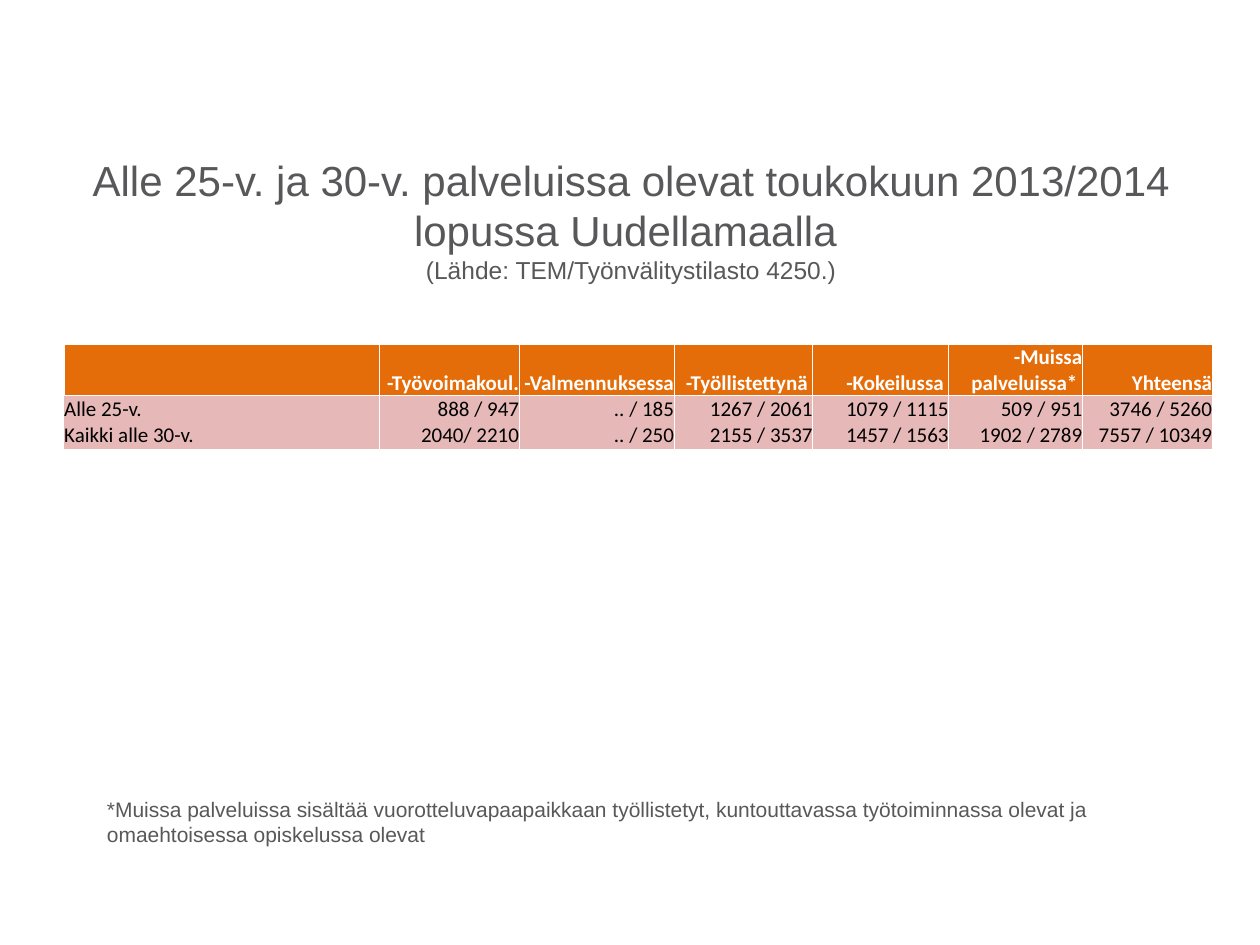
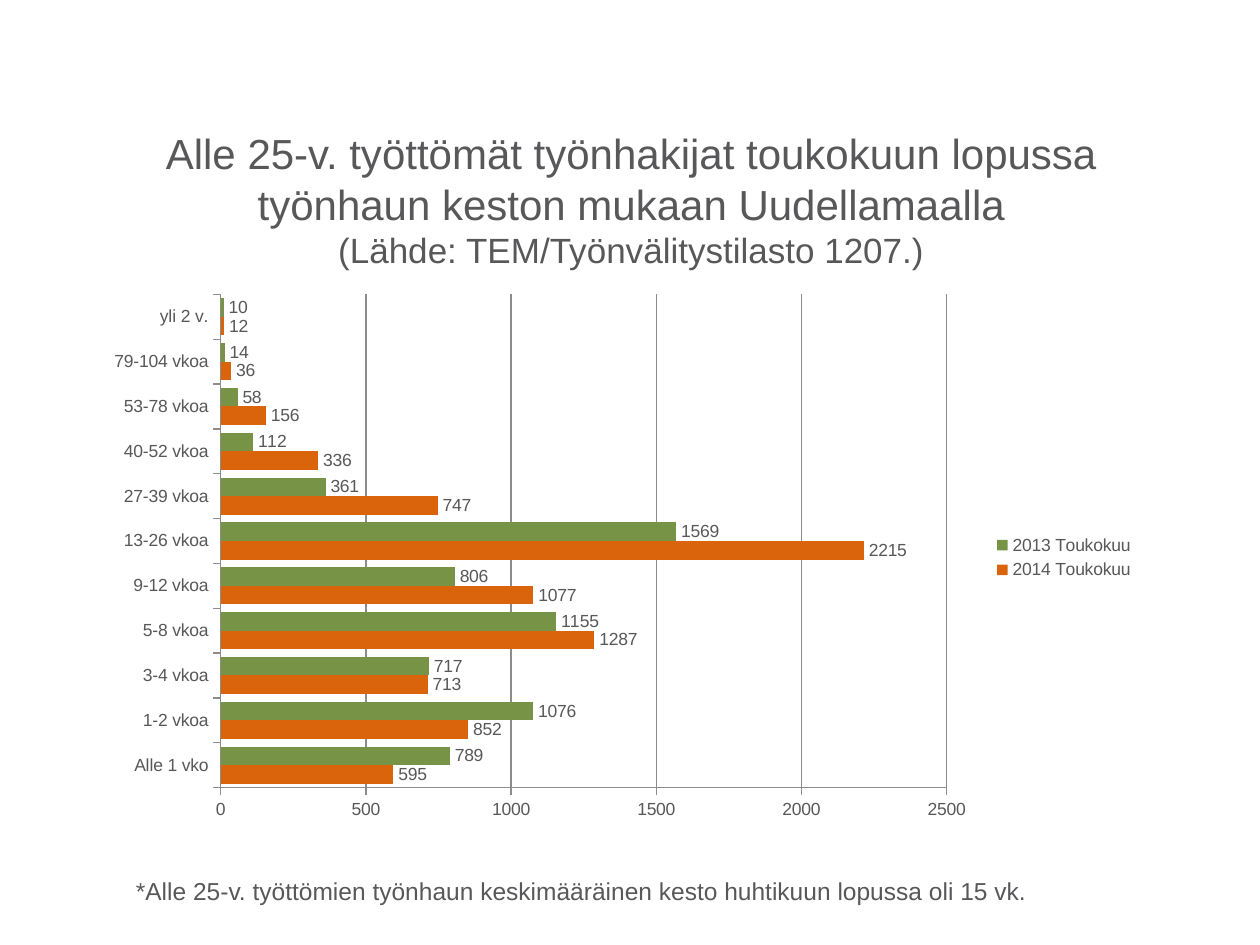
from lxml.etree import SubElement
from pptx import Presentation
from pptx.chart.data import CategoryChartData
from pptx.dml.color import RGBColor
from pptx.enum.chart import XL_CHART_TYPE as CT, XL_LABEL_POSITION as LP
from pptx.enum.chart import XL_LEGEND_POSITION as LEGEND, XL_TICK_MARK as TICK
from pptx.enum.text import MSO_ANCHOR as ANCHOR, MSO_AUTO_SIZE as FIT, PP_ALIGN as AL
from pptx.oxml.ns import qn
from pptx.util import Inches, Pt

WIDTH, HEIGHT = Inches(10), Inches(7.5)
GREY, WHITE, BLACK, AXIS = "58585A", "FFFFFF", "000000", "8C8C8C"
ORANGE, PINK = "E46D0A", "E6B9B8"
TITLE_LEFT, TITLE_WIDTH, TITLE_HEIGHT = 5.1, 90, 9.33

COLUMNS = [25, 11.1, 12.3, 11, 10.8, 10.6, 10.3]  # percent of the slide width
SERVICES = ["Työvoimakoul.", "Valmennuksessa", "Työllistettynä", "Kokeilussa",
            "Muissa palveluissa*"]
SERVICE_ROWS = [
    ["", *(f" -{name} " for name in SERVICES), "Yhteensä"],
    ["Alle 25-v.", "888 / 947", ".. / 185", "1267 / 2061", "1079 / 1115",
     "509 / 951", "3746 / 5260"],
    ["Kaikki alle 30-v.", "2040/ 2210", ".. / 250", "2155 / 3537", "1457 / 1563",
     "1902 / 2789", "7557 / 10349"],
]

DURATIONS = ["Alle 1 vko", "1-2 vkoa", "3-4 vkoa", "5-8 vkoa", "9-12 vkoa", "13-26 vkoa",
             "27-39 vkoa", "40-52 vkoa", "53-78 vkoa", "79-104 vkoa", "yli 2 v."]
SEEKERS = [
    ("2014 Toukokuu", "D9640C", [595, 852, 713, 1287, 1077, 2215, 747, 336, 156, 36, 12]),
    ("2013 Toukokuu", "779346", [789, 1076, 717, 1155, 806, 1569, 361, 112, 58, 14, 10]),
]


def rgb(value):
    return RGBColor.from_string(value)


def place(x, y, w, h):
    """Turn percentages of the slide into lengths."""
    return [round(share * side / 100)
            for share, side in zip((x, y, w, h), (WIDTH, HEIGHT, WIDTH, HEIGHT))]


def style(font, size, color=GREY, name="Arial", bold=False):
    font.size, font.name, font.bold = Pt(size), name, bold
    font.color.rgb = rgb(color)


def write(p, text, align=AL.LEFT, **font):
    p.alignment = align
    r = p.add_run()
    r.text = text
    style(r.font, **font)


def text_box(s, box, anchor=ANCHOR.TOP, fit=FIT.NONE):
    tf = s.shapes.add_textbox(*place(*box)).text_frame
    tf.word_wrap, tf.vertical_anchor, tf.auto_size = True, anchor, fit
    return tf.paragraphs[0]


def title(s, top, heading, source, source_size):
    p = text_box(s, (TITLE_LEFT, top, TITLE_WIDTH, TITLE_HEIGHT), ANCHOR.MIDDLE)
    write(p, heading, AL.CENTER, size=24)
    p.add_line_break()
    write(p, source, AL.CENTER, size=source_size)


def footnote(s, box, text, size):
    write(text_box(s, box, fit=FIT.SHAPE_TO_FIT_TEXT), text, size=size)


def borders(cell, widths):
    """Draw white borders; a width of 0 hides that side."""
    tcPr = cell._tc.get_or_add_tcPr()
    for side, width in zip("LRTB", widths):
        ln = SubElement(tcPr, qn(f"a:ln{side}"), w=str(Pt(width)))
        if width:
            fill = SubElement(ln, qn("a:solidFill"))
            SubElement(fill, qn("a:srgbClr"), val=WHITE)
        else:
            SubElement(ln, qn("a:noFill"))


def service_table(s, box, rows, heights):
    last = len(COLUMNS) - 1
    table = s.shapes.add_table(len(rows), len(COLUMNS), *place(*box)).table
    for column, share in zip(table.columns, COLUMNS):
        column.width = round(WIDTH * share / 100)
    for i, row in enumerate(rows):
        head = i == 0
        table.rows[i].height = round(HEIGHT * heights[i] / 100)
        for j, text in enumerate(row):
            cell = table.cell(i, j)
            cell.margin_left = cell.margin_right = cell.margin_top = cell.margin_bottom = 0
            cell.vertical_anchor = ANCHOR.BOTTOM
            edge = 0.5 if head else 0
            borders(cell, (
                1 if j == last else 0.5 if j else edge,
                1 if j == last - 1 else 0.5 if j < last else edge,
                0.5 if i < 2 else 0,
                edge,
            ))
            cell.fill.solid()
            cell.fill.fore_color.rgb = rgb(ORANGE if head else PINK)
            if text:
                write(cell.text_frame.paragraphs[0], text, AL.RIGHT if j else AL.LEFT,
                      size=12, name="Calibri", bold=head, color=WHITE if head else BLACK)


def thin_line(line):
    line.color.rgb, line.width = rgb(AXIS), Pt(0.75)


def fix_plot_area(chart, **shares):
    """Place the inner plot area by shares of the chart's size."""
    area = chart._chartSpace.chart.plotArea
    for old in area.findall(qn("c:layout")):
        area.remove(old)
    layout = SubElement(area, qn("c:layout"))
    area.insert(0, layout)
    manual = SubElement(layout, qn("c:manualLayout"))
    settings = dict(layoutTarget="inner", xMode="edge", yMode="edge", **shares)
    for tag, value in settings.items():
        SubElement(manual, qn(f"c:{tag}"), val=str(value))


def duration_chart(s, box):
    data = CategoryChartData()
    data.categories = DURATIONS
    for name, _, values in SEEKERS:
        data.add_series(name, values)
    chart = s.shapes.add_chart(CT.BAR_CLUSTERED, *place(*box), data).chart
    style(chart.font, 10)
    chart.has_title = False
    chart.has_legend = True
    chart.legend.position, chart.legend.include_in_layout = LEGEND.RIGHT, False

    # Bars and their values
    plot = chart.plots[0]
    plot.gap_width, plot.overlap, plot.vary_by_categories = 42, 0, False
    for series, (_, color, _) in zip(plot.series, SEEKERS):
        series.format.fill.solid()
        series.format.fill.fore_color.rgb = rgb(color)
        labels = series.data_labels
        labels.show_value, labels.position = True, LP.OUTSIDE_END
        style(labels.font, 10)

    # Axes
    for axis in (chart.category_axis, chart.value_axis):
        axis.major_tick_mark, axis.minor_tick_mark = TICK.OUTSIDE, TICK.NONE
        thin_line(axis.format.line)
    axis = chart.value_axis
    axis.minimum_scale, axis.maximum_scale, axis.major_unit = 0, 2500, 500
    axis.has_major_gridlines = True
    thin_line(axis.major_gridlines.format.line)
    fix_plot_area(chart, x=0.12, y=0.02, w=0.69, h=0.9)


def main():
    prs = Presentation()
    prs.slide_width, prs.slide_height = WIDTH, HEIGHT
    blank = prs.slide_layouts[6]

    # People in services
    s = prs.slides.add_slide(blank)
    title(s, 18.53, "Alle 25-v. ja 30-v. palveluissa olevat toukokuun 2013/2014 "
          "lopussa Uudellamaalla ", "(Lähde: TEM/Työnvälitystilasto 4250.)", 14)
    footnote(s, (7.5, 83.6, 85.8, 6.67),
             "*Muissa palveluissa sisältää vuorotteluvapaapaikkaan työllistetyt, "
             "kuntouttavassa työtoiminnassa olevat ja omaehtoisessa opiskelussa olevat", 12)
    service_table(s, (5.1, 36.4, 91.1, 11.07), SERVICE_ROWS, (5.47, 2.8, 2.8))

    # Job seekers by duration
    s = prs.slides.add_slide(blank)
    title(s, 16.4, "Alle 25-v. työttömät työnhakijat toukokuun lopussa "
          "työnhaun keston mukaan Uudellamaalla", "(Lähde: TEM/Työnvälitystilasto 1207.)", 20)
    footnote(s, (9.8, 92, 75.6, 4.53),
             "*Alle 25-v. työttömien työnhaun keskimääräinen kesto huhtikuun lopussa "
             "oli 15 vk.", 14)
    duration_chart(s, (7.5, 30, 83.5, 58))

    prs.save("out.pptx")


if __name__ == "__main__":
    main()
